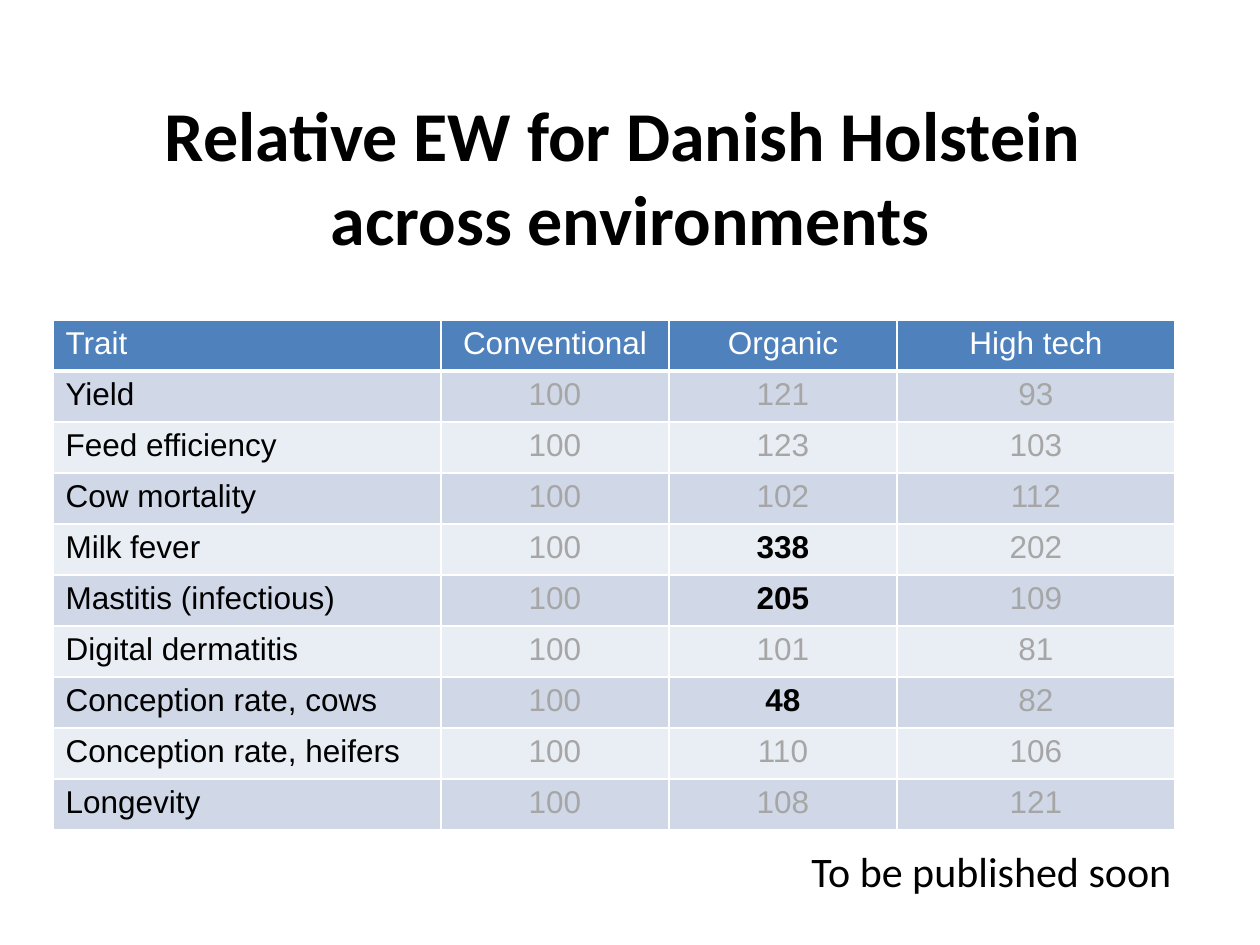
"""Build a slide comparing relative economic weights across environments."""
from dataclasses import dataclass

import pptx
import pptx.dml.color
import pptx.enum.text
import pptx.oxml
import pptx.oxml.ns
import pptx.util

RGBColor = pptx.dml.color.RGBColor
ALIGN = pptx.enum.text.PP_ALIGN
ANCHOR = pptx.enum.text.MSO_ANCHOR
FIT = pptx.enum.text.MSO_AUTO_SIZE

PX = 914400 / 126
BLACK = RGBColor(0x00, 0x00, 0x00)
WHITE = RGBColor(0xFF, 0xFF, 0xFF)
GREY = RGBColor(0xA6, 0xA6, 0xA6)
BLUE = RGBColor(0x4F, 0x81, 0xBD)
BANDS = (RGBColor(0xD0, 0xD8, 0xE8), RGBColor(0xE9, 0xED, 0xF4))

HEADERS = ("Trait", "Conventional", "Organic", "High tech")
COL_WIDTHS = (388, 228, 228, 278)
ROW_HEIGHT = 51


@dataclass(frozen=True)
class Trait:
    name: str
    organic: int
    high_tech: int
    highlight: bool = False
    conventional: int = 100


@dataclass(frozen=True)
class Label:
    box: tuple[int, int, int, int]
    lines: tuple[str, ...]
    size: int
    bold: bool
    align: ALIGN
    frame: dict


TRAITS = (
    Trait("Yield", 121, 93),
    Trait("Feed efficiency", 123, 103),
    Trait("Cow mortality", 102, 112),
    Trait("Milk fever", 338, 202, highlight=True),
    Trait("Mastitis (infectious)", 205, 109, highlight=True),
    Trait("Digital dermatitis", 101, 81),
    Trait("Conception rate, cows", 48, 82, highlight=True),
    Trait("Conception rate, heifers", 110, 106),
    Trait("Longevity", 108, 121),
)

LABELS = (
    Label((799, 839, 397, 63), ("To be published soon",), 24, False, ALIGN.LEFT,
          {"word_wrap": False, "auto_size": FIT.SHAPE_TO_FIT_TEXT}),
    Label((25, 86, 1211, 179),
          ("Relative EW for Danish Holstein ", "across environments"),
          40, True, ALIGN.CENTER,
          {"word_wrap": True, "vertical_anchor": ANCHOR.MIDDLE}),
)


def emu(px: int) -> int:
    """Convert slide pixels to EMU."""
    return round(px * PX)


def add_run(p, text: str, align: ALIGN, color: RGBColor, **font) -> None:
    """Write one formatted run into a paragraph."""
    p.alignment = align
    r = p.add_run()
    r.text = text
    for name, value in font.items():
        setattr(r.font, name, value)
    r.font.color.rgb = color


def set_borders(cell, bottom: int) -> None:
    """Draw white cell borders, with the bottom width in points."""
    tc_pr = cell._tc.get_or_add_tcPr()
    widths = {"lnL": 1, "lnR": 1, "lnT": 1, "lnB": bottom}
    for i, (tag, width) in enumerate(widths.items()):
        tc_pr.insert(i, pptx.oxml.parse_xml(
            f'<a:{tag} {pptx.oxml.ns.nsdecls("a")} w="{pptx.util.Pt(width)}">'
            f'<a:solidFill><a:srgbClr val="{WHITE}"/></a:solidFill></a:{tag}>'))


def fill_cell(cell, text: str, fill: RGBColor, color: RGBColor,
              align: ALIGN, bold: bool = False, bottom: int = 1) -> None:
    """Fill, border and label one table cell."""
    cell.fill.solid()
    cell.fill.fore_color.rgb = fill
    set_borders(cell, bottom)
    add_run(cell.text_frame.paragraphs[0], text, align, color,
            name="Arial", size=pptx.util.Pt(18), bold=bold)


def add_traits(s, left: int, top: int) -> None:
    """Add the table of traits by environment."""
    rows = len(TRAITS) + 1
    box = map(emu, (left, top, sum(COL_WIDTHS), rows * ROW_HEIGHT))
    table = s.shapes.add_table(rows, len(HEADERS), *box).table
    for column, width in zip(table.columns, COL_WIDTHS):
        column.width = emu(width)
    for row in table.rows:
        row.height = emu(ROW_HEIGHT)
    aligns = (ALIGN.LEFT,) + (ALIGN.CENTER,) * 3
    for c, (text, align) in enumerate(zip(HEADERS, aligns)):
        fill_cell(table.cell(0, c), text, BLUE, WHITE, align, bottom=3)
    for i, t in enumerate(TRAITS):
        values = (t.name, t.conventional, t.organic, t.high_tech)
        for c, (value, align) in enumerate(zip(values, aligns)):
            bold = t.highlight and c == 2
            color = BLACK if c == 0 or bold else GREY
            fill_cell(table.cell(i + 1, c), str(value), BANDS[i % 2],
                      color, align, bold)


def add_label(s, label: Label) -> None:
    """Add a text box with one paragraph per line."""
    tf = s.shapes.add_textbox(*map(emu, label.box)).text_frame
    for name, value in label.frame.items():
        setattr(tf, name, value)
    for i, line in enumerate(label.lines):
        p = tf.add_paragraph() if i else tf.paragraphs[0]
        add_run(p, line, label.align, BLACK, name="Calibri",
                size=pptx.util.Pt(label.size), bold=label.bold)


def main() -> None:
    """Build and save the slide."""
    prs = pptx.Presentation()
    prs.slide_width, prs.slide_height = emu(1260), emu(945)
    s = prs.slides.add_slide(prs.slide_layouts[6])
    add_traits(s, 53, 320)
    for label in LABELS:
        add_label(s, label)
    prs.save("out.pptx")


if __name__ == "__main__":
    main()
